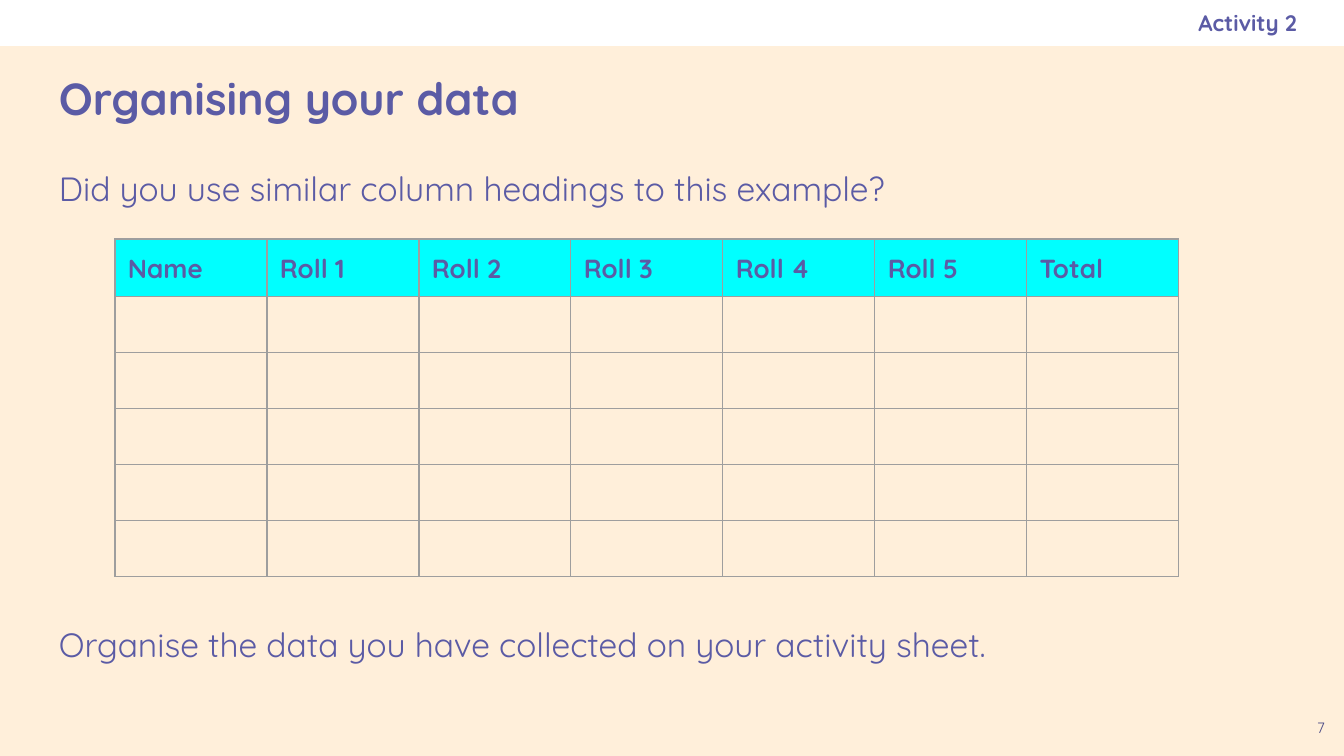
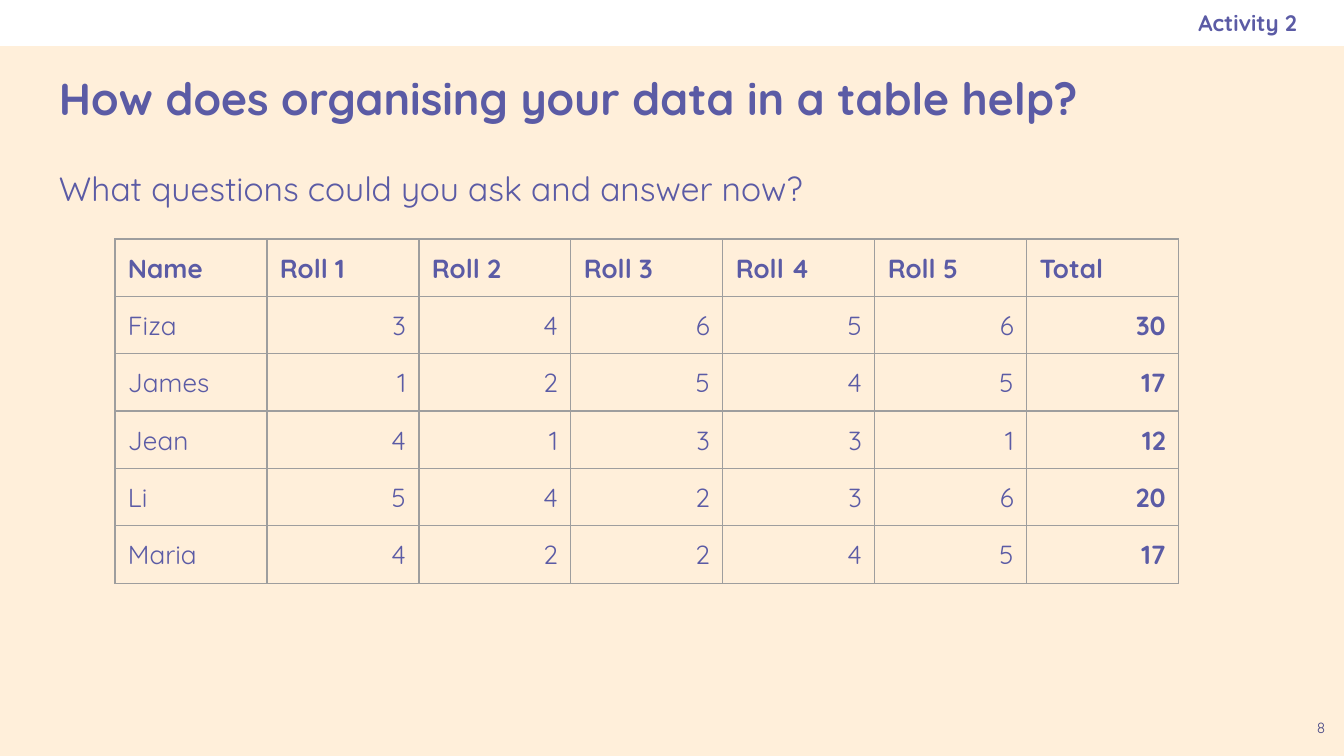
"""Build two slides on organising dice-roll data in a table."""
from dataclasses import dataclass

from lxml import etree
from pptx import Presentation
from pptx.dml.color import RGBColor
from pptx.enum.shapes import MSO_SHAPE
from pptx.enum.text import MSO_ANCHOR, PP_ALIGN
from pptx.oxml.ns import qn
from pptx.util import Pt

RECTANGLE = MSO_SHAPE.RECTANGLE
TOP, MIDDLE = MSO_ANCHOR.TOP, MSO_ANCHOR.MIDDLE
LEFT, CENTER, RIGHT = PP_ALIGN.LEFT, PP_ALIGN.CENTER, PP_ALIGN.RIGHT

EMU_PER_PX = 914400 / 134.4
SLIDE_WIDTH, SLIDE_HEIGHT = 1344, 756
BAND_HEIGHT = 46
INSET = 13
MARGIN = 46
CONTENT_WIDTH = SLIDE_WIDTH - 2 * MARGIN
LINE_HEIGHT = 102
TABLE_LEFT, TABLE_TOP = 115, 239
COLUMN_WIDTH, ROW_HEIGHT = 152, 56

HEADINGS = ["Name", *(f"Roll {number}" for number in range(1, 6)), "Total"]
EMPTY_ROWS = [[""] * len(HEADINGS)] * 5
ROLLS = {
    "Fiza": [3, 4, 6, 5, 6],
    "James": [1, 2, 5, 4, 5],
    "Jean": [4, 1, 3, 3, 1],
    "Li": [5, 4, 2, 3, 6],
    "Maria": [4, 2, 2, 4, 5],
}
TOTALS = [30, 17, 12, 20, 17]


@dataclass(frozen=True)
class Theme:
    """Colours, font and type sizes shared by the slides."""

    background: str = "FFEFDA"
    band: str = "FFFFFF"
    text: str = "5B5BA5"
    page_number: str = "494985"
    highlight: str = "00FFFF"
    border: str = "9E9E9E"
    font: str = "Quicksand"
    title_size: int = 24
    body_size: int = 18
    table_size: int = 14
    empty_cell_size: int = 12
    label_size: int = 12
    page_number_size: int = 8
    border_width: float = 0.75


THEME = Theme()


def px(length):
    """Turn a length in px into EMU."""
    return round(length * EMU_PER_PX)


def paint(fill, color):
    """Give a fill one solid colour."""
    fill.solid()
    fill.fore_color.rgb = RGBColor.from_string(color)


def style_paragraph(paragraph, size, bold=False, align=LEFT, color=THEME.text):
    """Align a paragraph and format its runs."""
    paragraph.alignment = align
    for run in paragraph.runs:
        run.font.name = THEME.font
        run.font.size = Pt(size)
        run.font.bold = bold
        run.font.color.rgb = RGBColor.from_string(color)


def add_text(slide, text, box, size, anchor=TOP, right_inset=INSET, **style):
    """Add a one-paragraph text box and return its paragraph."""
    frame = slide.shapes.add_textbox(*map(px, box)).text_frame
    frame.word_wrap = True
    frame.vertical_anchor = anchor
    frame.margin_left = frame.margin_top = frame.margin_bottom = px(INSET)
    frame.margin_right = px(right_inset)
    frame.text = text
    paragraph = frame.paragraphs[0]
    style_paragraph(paragraph, size, **style)
    return paragraph


def add_body(slide, text, top, height):
    """Add a line of body text."""
    box = (MARGIN, top, CONTENT_WIDTH, height)
    paragraph = add_text(slide, text, box, THEME.body_size)
    paragraph.line_spacing = 1.15
    paragraph.space_after = Pt(16)


def add_band(slide):
    """Add the white band across the top."""
    band = slide.shapes.add_shape(RECTANGLE, 0, 0, px(SLIDE_WIDTH), px(BAND_HEIGHT))
    band.shadow.inherit = False
    paint(band.fill, THEME.band)
    band.line.fill.background()


def add_activity_slide(presentation, title, question, page):
    """Add a slide with the shared band, title, question and page number."""
    slide = presentation.slides.add_slide(presentation.slide_layouts[6])
    paint(slide.background.fill, THEME.background)
    add_band(slide)
    add_body(slide, question, 149, 456)
    add_text(slide, title, (MARGIN, 47, CONTENT_WIDTH, LINE_HEIGHT),
             THEME.title_size, anchor=MIDDLE, bold=True)
    add_text(slide, str(page), (SLIDE_WIDTH - 46, SLIDE_HEIGHT - 46, 46, 46),
             THEME.page_number_size, align=CENTER, color=THEME.page_number)
    add_text(slide, "Activity 2", (773, 0, 524, BAND_HEIGHT), THEME.label_size,
             anchor=MIDDLE, right_inset=0, bold=True, align=RIGHT)
    return slide


def add_borders(cell):
    """Draw a thin line on each side of a cell."""
    properties = cell._tc.get_or_add_tcPr()
    for side in ("a:lnL", "a:lnR", "a:lnT", "a:lnB"):
        line = etree.SubElement(properties, qn(side), w=str(Pt(THEME.border_width)))
        fill = etree.SubElement(line, qn("a:solidFill"))
        etree.SubElement(fill, qn("a:srgbClr"), val=THEME.border)


def fill_cell(cell, text, bold, align, color):
    """Set the text, borders and fill of a cell."""
    cell.margin_left = cell.margin_right = px(INSET)
    cell.margin_top = cell.margin_bottom = px(INSET)
    cell.text_frame.text = text
    paragraph = cell.text_frame.paragraphs[0]
    style_paragraph(paragraph, THEME.table_size, bold, align)
    if not text:
        etree.SubElement(paragraph._p, qn("a:endParaRPr"),
                         sz=str(THEME.empty_cell_size * 100))
    add_borders(cell)
    if color:
        paint(cell.fill, color)
    else:
        cell.fill.background()


def add_roll_table(slide, body_rows, header_color=None):
    """Add the table of rolls under its column headings."""
    rows = [HEADINGS, *body_rows]
    last_column = len(HEADINGS) - 1
    frame = slide.shapes.add_table(
        len(rows), len(HEADINGS), px(TABLE_LEFT), px(TABLE_TOP),
        px(COLUMN_WIDTH * len(HEADINGS)), px(ROW_HEIGHT * len(rows)))
    table = frame.table
    table.horz_banding = False
    for column in table.columns:
        column.width = px(COLUMN_WIDTH)
    for row_index, values in enumerate(rows):
        table.rows[row_index].height = px(ROW_HEIGHT)
        is_header = row_index == 0
        for column_index, value in enumerate(values):
            fill_cell(
                table.cell(row_index, column_index), str(value),
                bold=is_header or column_index == last_column,
                align=LEFT if is_header or column_index == 0 else RIGHT,
                color=header_color if is_header else None)


def main():
    """Build both slides and save the presentation."""
    presentation = Presentation()
    presentation.slide_width = px(SLIDE_WIDTH)
    presentation.slide_height = px(SLIDE_HEIGHT)

    organising = add_activity_slide(
        presentation, "Organising your data",
        "Did you use similar column headings to this example?", 7)
    add_roll_table(organising, EMPTY_ROWS, THEME.highlight)
    add_body(organising,
             "Organise the data you have collected on your activity sheet.",
             605, LINE_HEIGHT)

    helping = add_activity_slide(
        presentation, "How does organising your data in a table help?",
        "What questions could you ask and answer now?", 8)
    add_roll_table(helping, [[name, *rolls, total] for (name, rolls), total
                             in zip(ROLLS.items(), TOTALS)])

    presentation.save("out.pptx")


if __name__ == "__main__":
    main()
